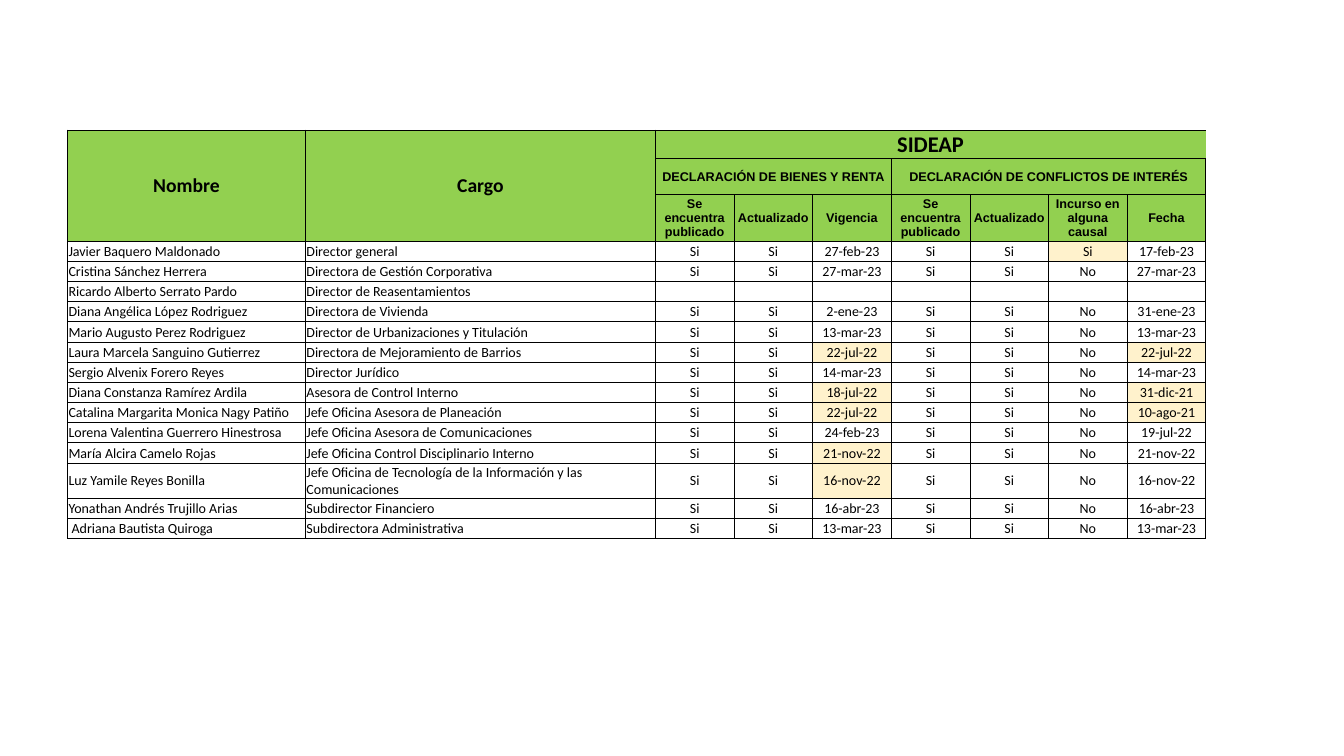
from lxml import etree
from pptx import Presentation
from pptx.dml.color import RGBColor
from pptx.enum.text import MSO_ANCHOR, PP_ALIGN
from pptx.oxml.ns import qn
from pptx.util import Inches, Pt

LEFT, CENTER = PP_ALIGN.LEFT, PP_ALIGN.CENTER
MIDDLE, BOTTOM = MSO_ANCHOR.MIDDLE, MSO_ANCHOR.BOTTOM

COLORS = {"text": "000000", "border": "000000", "header": "92D050", "highlight": "FFF2CC"}
NO_STYLE_TABLE = "{2D5ABB26-0587-4C30-8999-92F81FD0307C}"

COLUMN_WIDTHS = [2.36, 3.47] + [0.78] * 7
HEADER_HEIGHTS = [0.15, 0.36, 0.46]
STAFF_HEIGHT = 0.2

# Row, column, last row, last column, text, size, font, anchor
HEADERS = [
    (0, 0, 2, 0, "Nombre", 14, "Calibri", MIDDLE),
    (0, 1, 2, 1, "Cargo", 14, "Calibri", MIDDLE),
    (0, 2, 0, 8, "SIDEAP", 16, "Calibri", BOTTOM),
    (1, 2, 1, 4, "DECLARACIÓN DE BIENES Y RENTA", 9, "Arial", MIDDLE),
    (1, 5, 1, 8, "DECLARACIÓN DE CONFLICTOS DE INTERÉS", 9, "Arial", MIDDLE),
]
SUBHEADERS = ["Se encuentra publicado", "Actualizado", "Vigencia", "Se encuentra publicado",
              "Actualizado", "Incurso en alguna causal", "Fecha"]

# Name, post, asset declaration date, conflict found, conflict declaration date
STAFF = [
    ("Javier Baquero Maldonado", "Director general", "27-feb-23", "Si", "17-feb-23"),
    ("Cristina Sánchez Herrera", "Directora de Gestión Corporativa", "27-mar-23", "No", "27-mar-23"),
    ("Ricardo Alberto Serrato Pardo", "Director de Reasentamientos", "", "", ""),
    ("Diana Angélica López Rodriguez", "Directora de Vivienda", "2-ene-23", "No", "31-ene-23"),
    ("Mario Augusto Perez Rodriguez", "Director de Urbanizaciones y Titulación",
     "13-mar-23", "No", "13-mar-23"),
    ("Laura Marcela Sanguino Gutierrez", "Directora de Mejoramiento de Barrios",
     "22-jul-22", "No", "22-jul-22"),
    ("Sergio Alvenix Forero Reyes", "Director Jurídico", "14-mar-23", "No", "14-mar-23"),
    ("Diana Constanza Ramírez Ardila", "Asesora de Control Interno",
     "18-jul-22", "No", "31-dic-21"),
    ("Catalina Margarita Monica Nagy Patiño", "Jefe Oficina Asesora de Planeación",
     "22-jul-22", "No", "10-ago-21"),
    ("Lorena Valentina Guerrero Hinestrosa", "Jefe Oficina Asesora de Comunicaciones",
     "24-feb-23", "No", "19-jul-22"),
    ("María Alcira Camelo Rojas", "Jefe Oficina Control Disciplinario Interno",
     "21-nov-22", "No", "21-nov-22"),
    ("Luz Yamile Reyes Bonilla",
     "Jefe Oficina de Tecnología de la Información y las Comunicaciones",
     "16-nov-22", "No", "16-nov-22"),
    ("Yonathan Andrés Trujillo Arias", "Subdirector Financiero", "16-abr-23", "No", "16-abr-23"),
    (" Adriana Bautista Quiroga", "Subdirectora Administrativa", "13-mar-23", "No", "13-mar-23"),
]
# Staff index and table column of the highlighted cells
HIGHLIGHTS = {(0, 7), (5, 4), (5, 8), (7, 4), (7, 8), (8, 4), (8, 8), (10, 4), (11, 4)}


class SlideBuilder:
    def __init__(self, presentation):
        self.slide = presentation.slides.add_slide(presentation.slide_layouts[6])

    def add_table(self, left, top, height, column_widths, row_heights):
        shape = self.slide.shapes.add_table(
            len(row_heights), len(column_widths), Inches(left), Inches(top),
            Inches(sum(column_widths)), Inches(height))
        table = shape.table
        table.first_row = table.horz_banding = False
        shape._element.find(".//" + qn("a:tableStyleId")).text = NO_STYLE_TABLE
        for column, width in zip(table.columns, column_widths):
            column.width = Inches(width)
        for row, row_height in zip(table.rows, row_heights):
            row.height = Inches(row_height)
        shape.height = Inches(height)
        return table

    def add_borders(self, cell, open_right=False):
        properties = cell._tc.get_or_add_tcPr()
        for side in "LRTB":
            line = etree.SubElement(properties, qn("a:ln" + side), w=str(Pt(0.5)))
            if side == "R" and open_right:
                etree.SubElement(line, qn("a:noFill"))
            else:
                fill = etree.SubElement(line, qn("a:solidFill"))
                etree.SubElement(fill, qn("a:srgbClr"), val=COLORS["border"])

    def fill_cell(self, cell, text, size=10, font="Calibri", bold=False,
                  align=CENTER, anchor=MIDDLE, fill=None):
        cell.margin_left = cell.margin_right = cell.margin_top = Inches(0.01)
        cell.margin_bottom = Inches(0)
        cell.vertical_anchor = anchor
        if fill:
            cell.fill.solid()
            cell.fill.fore_color.rgb = RGBColor.from_string(COLORS[fill])
        else:
            cell.fill.background()
        cell.text_frame.text = text
        paragraph = cell.text_frame.paragraphs[0]
        paragraph.alignment = align
        for run in paragraph.runs:
            run.font.size = Pt(size)
            run.font.name = font
            run.font.bold = bold
            run.font.color.rgb = RGBColor.from_string(COLORS["text"])
        if not text:  # keeps empty rows as low as the others
            etree.SubElement(paragraph._p, qn("a:endParaRPr"), sz=str(size * 100))


def main():
    presentation = Presentation()
    presentation.slide_width = Inches(13.33)
    presentation.slide_height = Inches(7.5)
    builder = SlideBuilder(presentation)

    # Grid
    row_heights = HEADER_HEIGHTS + [STAFF_HEIGHT] * len(STAFF)
    table = builder.add_table(0.67, 1.29, 4.08, COLUMN_WIDTHS, row_heights)
    for row in range(len(row_heights)):
        for column in range(len(COLUMN_WIDTHS)):
            cell = table.cell(row, column)
            builder.add_borders(cell, open_right=row == 0 and column >= 2)
            if row < len(HEADER_HEIGHTS):
                builder.fill_cell(cell, "", fill="header")

    # Header rows
    for row, column, last_row, last_column, text, size, font, anchor in HEADERS:
        cell = table.cell(row, column)
        cell.merge(table.cell(last_row, last_column))
        builder.fill_cell(cell, text, size, font, True, anchor=anchor, fill="header")
    for column, text in enumerate(SUBHEADERS, start=2):
        builder.fill_cell(table.cell(2, column), text, 9, "Arial", True, fill="header")

    # Staff rows
    for index, (name, post, asset_date, conflict, conflict_date) in enumerate(STAFF):
        published = "Si" if asset_date else ""
        values = [name, post, published, published, asset_date,
                  published, published, conflict, conflict_date]
        for column, text in enumerate(values):
            builder.fill_cell(
                table.cell(index + len(HEADER_HEIGHTS), column), text,
                align=LEFT if column < 2 else CENTER,
                fill="highlight" if (index, column) in HIGHLIGHTS else None)

    presentation.save("out.pptx")


if __name__ == "__main__":
    main()
